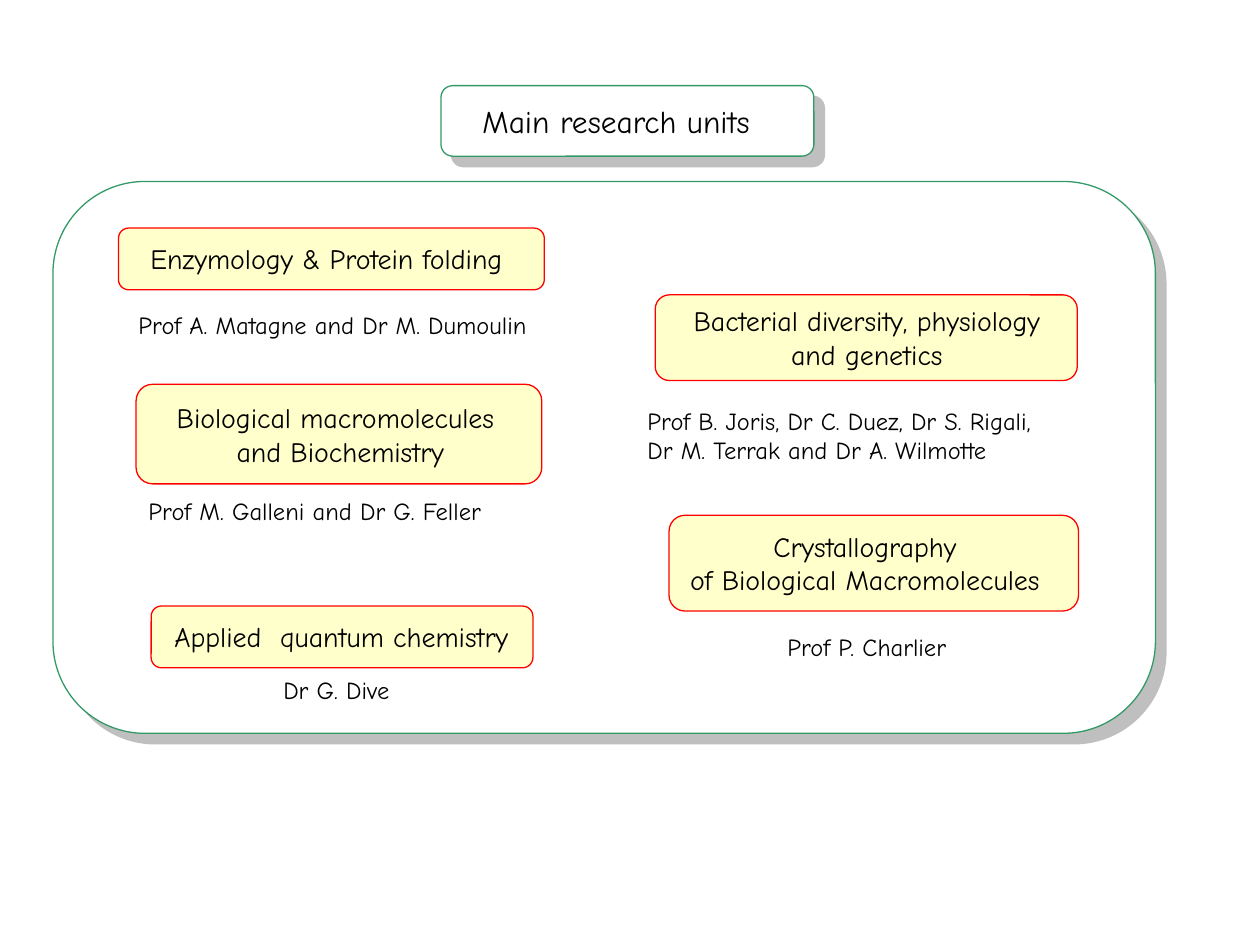
from lxml.etree import SubElement
from pptx import Presentation
from pptx.dml.color import RGBColor
from pptx.enum.shapes import MSO_SHAPE
from pptx.enum.text import MSO_AUTO_SIZE, PP_ALIGN
from pptx.oxml.ns import qn
from pptx.util import Inches, Pt

FONT = "Comic Neue"
GREEN, RED, CREAM, WHITE, BLACK = "339966", "FF0000", "FFFFCC", "FFFFFF", "000000"

TITLE_FRAME = (3.5, 0.68, 2.96, 0.56)
TITLE = ("Main research units", (3.73, 0.76, 2.51, 0.4))
PANEL = (0.42, 1.44, 8.75, 4.38)

UNITS = [
    {
        "frame": (1.08, 3.05, 3.22, 0.79),
        "name": (["Biological macromolecules ", "and Biochemistry"], (1.24, 3.13, 2.92, 0.64)),
        "people": ("Prof M. Galleni and Dr G. Feller", (1.08, 3.89, 3.02, 0.33)),
    },
    {
        "frame": (5.2, 2.34, 3.35, 0.68),
        "name": (["Bacterial diversity, physiology", "and genetics"], (5.22, 2.36, 3.32, 0.64)),
        "people": (
            "Prof B. Joris, Dr C. Duez, Dr S. Rigali, \nDr M. Terrak and Dr A. Wilmotte",
            (5.04, 3.17, 3.71, 0.57),
        ),
    },
    {
        "frame": (0.94, 1.81, 3.38, 0.49),
        "name": (["Enzymology & Protein folding"], (0.99, 1.84, 3.27, 0.4)),
        "tail": (" ", 18, "Arial"),
        "people": ("Prof A. Matagne and Dr M. Dumoulin", (1, 2.41, 3.48, 0.33)),
    },
    {
        "frame": (5.31, 4.09, 3.25, 0.76),
        "name": (["Crystallography\nof Biological Macromolecules"], (5.28, 4.15, 3.17, 0.64)),
        "people": ("Prof P. Charlier", (6.15, 4.97, 1.59, 0.33)),
    },
    {
        "frame": (1.2, 4.81, 3.03, 0.49),
        "name": (["Applied  quantum chemistry"], (1.18, 4.87, 3.06, 0.37)),
        "people": ("Dr G. Dive", (2.15, 5.31, 1.12, 0.33)),
    },
]


def color(value):
    return RGBColor.from_string(value)


def add_frame(page, place, fill, line):
    frame = page.shapes.add_shape(MSO_SHAPE.ROUNDED_RECTANGLE, *map(Inches, place))
    frame.shadow.inherit = False
    frame.fill.solid()
    frame.fill.fore_color.rgb = color(fill)
    frame.line.color.rgb = color(line)
    frame.line.width = Pt(0.75)
    return frame


def add_shadow(frame):
    effects = frame.element.spPr.find(qn("a:effectLst"))
    shadow = SubElement(effects, qn("a:outerShdw"), blurRad="0", dist=str(Pt(8.5)),
                        dir=str(45 * 60000), algn="ctr", rotWithShape="0")
    tint = SubElement(shadow, qn("a:srgbClr"), val="808080")
    SubElement(tint, qn("a:alpha"), val="50000")


def add_span(para, text, size, font=FONT):
    span = para.add_run()
    span.text = text
    span.font.size = Pt(size)
    span.font.name = font
    span.font.color.rgb = color(BLACK)


def add_text(page, paragraphs, place, size, align=PP_ALIGN.LEFT):
    box = page.shapes.add_textbox(*map(Inches, place))
    frame = box.text_frame
    frame.word_wrap = False
    frame.auto_size = MSO_AUTO_SIZE.SHAPE_TO_FIT_TEXT
    for index, text in enumerate(paragraphs):
        para = frame.add_paragraph() if index else frame.paragraphs[0]
        para.alignment = align
        for number, line in enumerate(text.split("\n")):
            if number:
                para.add_line_break()
            add_span(para, line, size)
    return para


def main():
    deck = Presentation()
    deck.slide_width, deck.slide_height = Inches(10), Inches(7.5)
    page = deck.slides.add_slide(deck.slide_layouts[6])

    add_shadow(add_frame(page, TITLE_FRAME, WHITE, GREEN))
    title, place = TITLE
    add_text(page, [title], place, 18)
    add_shadow(add_frame(page, PANEL, WHITE, GREEN))

    for unit in UNITS:
        add_frame(page, unit["frame"], CREAM, RED)
        name, place = unit["name"]
        para = add_text(page, name, place, 16, PP_ALIGN.CENTER)
        if "tail" in unit:
            add_span(para, *unit["tail"])
    for unit in UNITS:
        people, place = unit["people"]
        add_text(page, [people], place, 14)

    deck.save("out.pptx")


if __name__ == "__main__":
    main()
